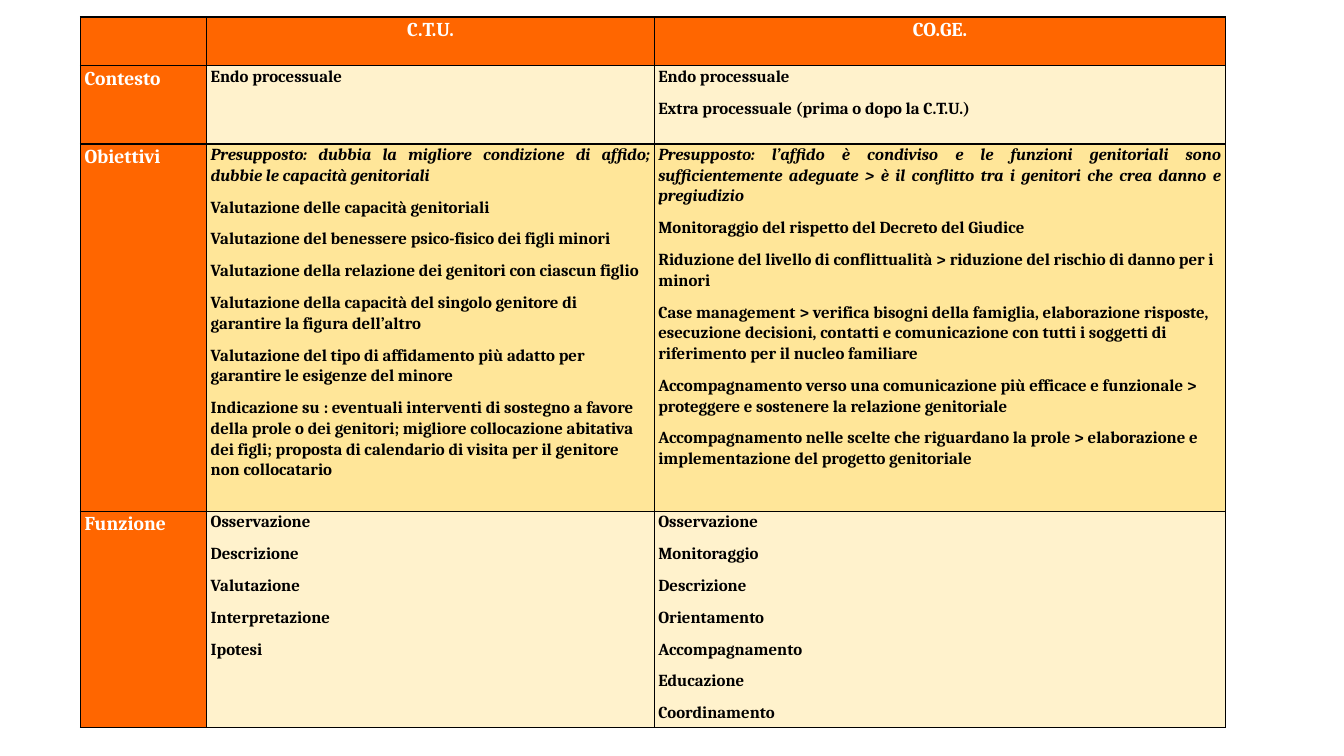
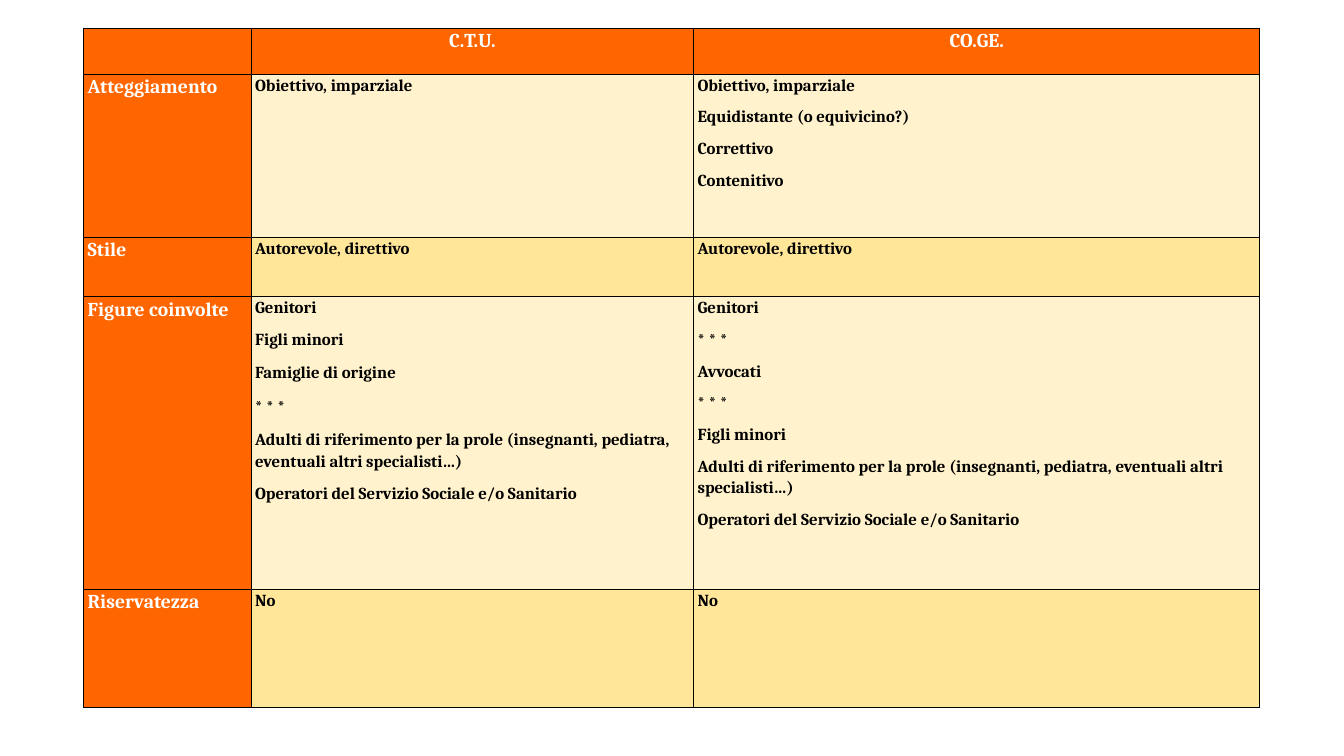
import dataclasses

import lxml.etree
import pptx
import pptx.dml.color
import pptx.enum.text
import pptx.oxml.ns
import pptx.util

Cm = pptx.util.Cm
RGBColor = pptx.dml.color.RGBColor
ALIGN = pptx.enum.text.PP_ALIGN

ORANGE = RGBColor(0xFF, 0x66, 0x00)
CREAM = RGBColor(0xFF, 0xF2, 0xCC)
YELLOW = RGBColor(0xFF, 0xE6, 0x99)
BLACK = RGBColor(0, 0, 0)
WHITE = RGBColor(0xFF, 0xFF, 0xFF)


@dataclasses.dataclass
class Entry:
    """One paragraph of a body cell."""
    text: str
    premise: bool = False  # italic and justified
    spacing: float = 1.07


class ComparisonDeck:
    FONT = "Cambria"
    HEADING_SIZE = pptx.util.Pt(14)
    BODY_SIZE = pptx.util.Pt(12)
    SPACE_AFTER = pptx.util.Pt(8)
    BORDER = pptx.util.Pt(1)
    SIDE_MARGIN = Cm(0.1)
    HEADINGS = ("", "C.T.U.", "CO.GE.")

    def __init__(self):
        self.presentation = pptx.Presentation()
        self.presentation.slide_width = Cm(33.87)
        self.presentation.slide_height = Cm(19.05)
        self.slide = None

    def add_slide(self):
        blank_layout = self.presentation.slide_layouts[6]
        self.slide = self.presentation.slides.add_slide(blank_layout)

    def add_comparison(self, left, top, widths, heights, topics):
        """Table with a heading row and one row for each topic."""
        frame = self.slide.shapes.add_table(
            len(heights), len(widths), Cm(left), Cm(top),
            Cm(sum(widths)), Cm(sum(heights)))
        table = frame.table
        table.first_row = table.horz_banding = False
        for column, width in zip(table.columns, widths):
            column.width = Cm(width)
        for row, height in zip(table.rows, heights):
            row.height = Cm(height)

        for column, heading in enumerate(self.HEADINGS):
            self.heading_cell(table.cell(0, column), heading, ALIGN.CENTER)
        for row, (topic, *answers) in enumerate(topics, start=1):
            self.heading_cell(table.cell(row, 0), topic, ALIGN.LEFT)
            band = CREAM if row % 2 else YELLOW
            for column, entries in enumerate(answers, start=1):
                self.body_cell(table.cell(row, column), entries, band)

    def heading_cell(self, cell, text, alignment):
        self.style_cell(cell, ORANGE)
        paragraph = cell.text_frame.paragraphs[0]
        self.fill_paragraph(paragraph, Entry(text), self.HEADING_SIZE, WHITE,
                            alignment)

    def body_cell(self, cell, entries, fill):
        self.style_cell(cell, fill)
        for index, entry in enumerate(entries):
            if isinstance(entry, str):
                entry = Entry(entry)
            frame = cell.text_frame
            paragraph = frame.add_paragraph() if index else frame.paragraphs[0]
            alignment = ALIGN.JUSTIFY if entry.premise else ALIGN.LEFT
            self.fill_paragraph(paragraph, entry, self.BODY_SIZE, BLACK,
                                alignment)

    def fill_paragraph(self, paragraph, entry, size, color, alignment):
        paragraph.alignment = alignment
        paragraph.line_spacing = entry.spacing
        paragraph.space_after = self.SPACE_AFTER
        if not entry.text:
            return
        run = paragraph.add_run()
        run.text = entry.text
        run.font.name = self.FONT
        run.font.size = size
        run.font.bold = True
        run.font.italic = entry.premise
        run.font.color.rgb = color

    def style_cell(self, cell, fill):
        cell.margin_left = cell.margin_right = self.SIDE_MARGIN
        cell.margin_top = cell.margin_bottom = 0
        cell.fill.solid()
        cell.fill.fore_color.rgb = fill
        # Borders come before the fill in the cell properties
        qn = pptx.oxml.ns.qn
        properties = cell._tc.get_or_add_tcPr()
        for position, side in enumerate(("lnL", "lnR", "lnT", "lnB")):
            line = lxml.etree.Element(qn(f"a:{side}"), w=str(int(self.BORDER)))
            solid = lxml.etree.SubElement(line, qn("a:solidFill"))
            lxml.etree.SubElement(solid, qn("a:srgbClr"), val=str(BLACK))
            properties.insert(position, line)


# Texts: topic, C.T.U. entries, CO.GE. entries
PURPOSE = [
    ("Contesto",
     ["Endo processuale"],
     ["Endo processuale", "Extra processuale (prima o dopo la C.T.U.)"]),
    ("Obiettivi",
     [Entry("Presupposto: dubbia la migliore condizione di affido; dubbie le "
            "capacità genitoriali", premise=True),
      "Valutazione delle capacità genitoriali",
      "Valutazione del benessere psico-fisico dei figli minori",
      "Valutazione della relazione dei genitori con ciascun figlio",
      "Valutazione della capacità del singolo genitore di garantire la figura "
      "dell’altro",
      "Valutazione del tipo di affidamento più adatto per garantire le "
      "esigenze del minore",
      "Indicazione su : eventuali interventi di sostegno a favore della prole "
      "o dei genitori; migliore collocazione abitativa dei figli; proposta di "
      "calendario di visita per il genitore non collocatario"],
     [Entry("Presupposto: l’affido è condiviso e le funzioni genitoriali sono "
            "sufficientemente adeguate > è il conflitto tra i genitori che "
            "crea danno e pregiudizio", premise=True),
      "Monitoraggio del rispetto del Decreto del Giudice",
      "Riduzione del livello di conflittualità > riduzione del rischio di "
      "danno per i minori",
      "Case management > verifica bisogni della famiglia, elaborazione "
      "risposte, esecuzione decisioni, contatti e comunicazione con tutti i "
      "soggetti di riferimento per il nucleo familiare",
      "Accompagnamento verso una comunicazione più efficace e funzionale > "
      "proteggere e sostenere la relazione genitoriale",
      "Accompagnamento nelle scelte che riguardano la prole > elaborazione e "
      "implementazione del progetto genitoriale"]),
    ("Funzione",
     ["Osservazione", "Descrizione", "Valutazione", "Interpretazione",
      "Ipotesi"],
     ["Osservazione", "Monitoraggio", "Descrizione", "Orientamento",
      "Accompagnamento", "Educazione", "Coordinamento"]),
]

SEPARATOR = "* * *"
ADULTS = ("Adulti di riferimento per la prole (insegnanti, pediatra, "
          "eventuali altri specialisti…)")
SERVICES = "Operatori del Servizio Sociale e/o Sanitario"
CONDUCT = [
    ("Atteggiamento",
     ["Obiettivo, imparziale"],
     ["Obiettivo, imparziale", "Equidistante (o equivicino?)", "Correttivo",
      "Contenitivo"]),
    ("Stile", ["Autorevole, direttivo"], ["Autorevole, direttivo"]),
    ("Figure coinvolte",
     ["Genitori", "Figli minori",
      Entry("Famiglie di origine", spacing=1.15),
      Entry(SEPARATOR, spacing=1.15),
      Entry(ADULTS, spacing=1.15),
      SERVICES],
     ["Genitori", SEPARATOR, "Avvocati", SEPARATOR, "Figli minori", ADULTS,
      SERVICES]),
    ("Riservatezza", ["No"], ["No"]),
]


def main():
    deck = ComparisonDeck()

    # Context, aims and function
    deck.add_slide()
    deck.add_comparison(2.03, 0.43, (3.18, 11.28, 14.4),
                        (1.23, 1.97, 9.25, 5.46), PURPOSE)

    # Attitude, style, people and confidentiality
    deck.add_slide()
    deck.add_comparison(2.11, 0.71, (4.22, 11.15, 14.27),
                        (1.17, 4.11, 1.49, 7.38, 2.96), CONDUCT)

    deck.presentation.save("out.pptx")


if __name__ == "__main__":
    main()
